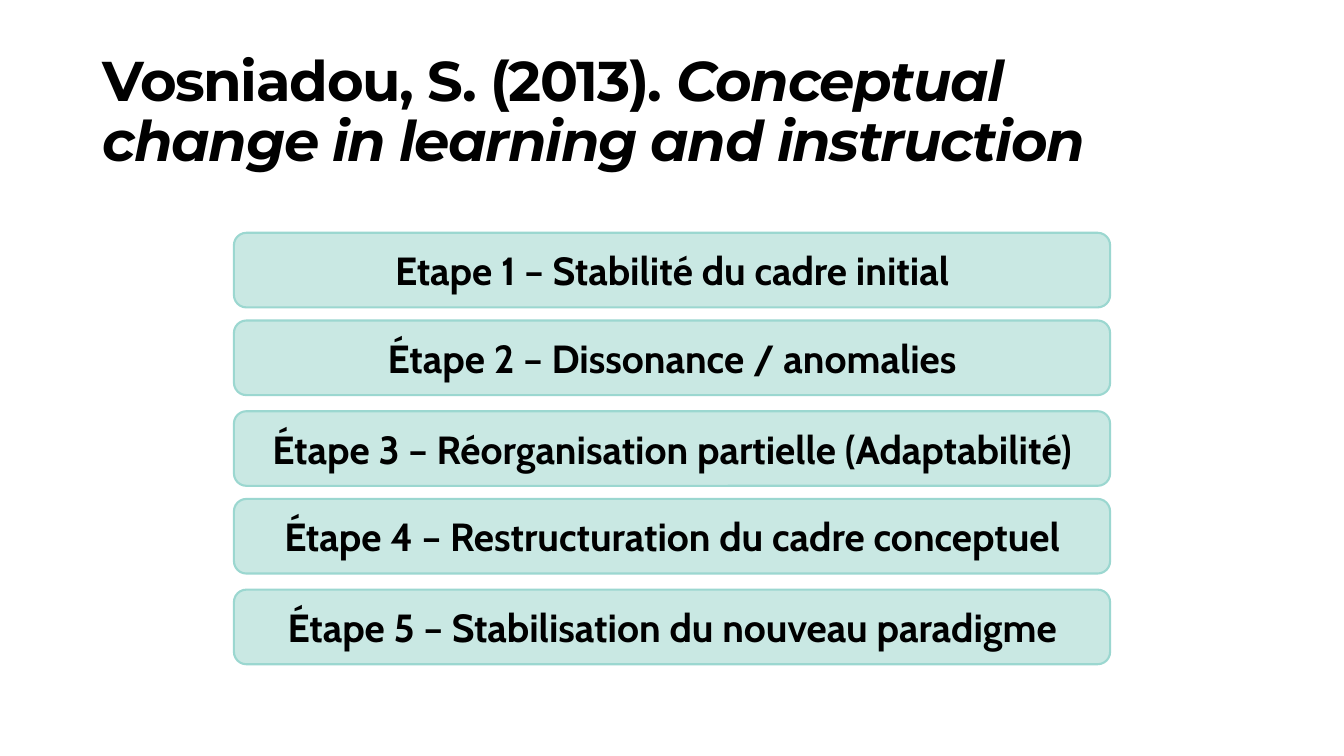
"""Build a slide listing the five stages of conceptual change."""
from dataclasses import dataclass

from pptx import Presentation
from pptx.dml.color import RGBColor
from pptx.enum.shapes import MSO_SHAPE
from pptx.enum.text import MSO_ANCHOR, MSO_AUTO_SIZE, PP_ALIGN
from pptx.util import Inches, Pt

ROUNDED = MSO_SHAPE.ROUNDED_RECTANGLE
MIDDLE = MSO_ANCHOR.MIDDLE
FIXED_SIZE = MSO_AUTO_SIZE.NONE
LEFT, CENTER = PP_ALIGN.LEFT, PP_ALIGN.CENTER

TITLE_LINES = [
    [("Vosniadou, S. (2013). ", False), ("Conceptual", True)],
    [("change in learning and instruction", True)],
]
STAGES = [
    "Etape 1 – Stabilité du cadre initial",
    "Étape 2 – Dissonance / anomalies",
    "Étape 3 – Réorganisation partielle (Adaptabilité)",
    "Étape 4 – Restructuration du cadre conceptuel",
    "Étape 5 – Stabilisation du nouveau paradigme",
]

SLIDE_SIZE = (13.33, 7.5)
TITLE_BOX = (0.92, 0.4, 11.5, 1.45)
STAGE_LEFT, STAGE_TOP, STAGE_WIDTH, STAGE_HEIGHT = 2.32, 2.31, 8.69, 0.74
PAIR_STEP, STEP_IN_PAIR = 1.77, 0.87


@dataclass(frozen=True)
class Theme:
    background: RGBColor = RGBColor.from_string("FFFFFF")
    text: RGBColor = RGBColor.from_string("000000")
    stage_fill: RGBColor = RGBColor.from_string("C9E8E3")
    stage_line: RGBColor = RGBColor.from_string("9BD7D0")
    title_font: str = "Montserrat"
    stage_font: str = "Cabin"
    title_size: int = 40
    stage_size: int = 28
    line_width: float = 1.5
    title_tracking: int = -100


THEME = Theme()


def add_run(paragraph, text, font_name, size, italic=False):
    run = paragraph.add_run()
    run.text = text
    run.font.name = font_name
    run.font.size = Pt(size)
    run.font.bold = True
    run.font.italic = italic
    run.font.color.rgb = THEME.text
    return run


def fill_title(title):
    title.left, title.top, title.width, title.height = map(Inches, TITLE_BOX)
    frame = title.text_frame
    frame.word_wrap = True
    frame.auto_size = FIXED_SIZE
    frame.vertical_anchor = MIDDLE
    paragraph = frame.paragraphs[0]
    paragraph.alignment = LEFT
    paragraph.line_spacing = 0.9
    for index, line in enumerate(TITLE_LINES):
        if index:
            paragraph.add_line_break()
        for text, italic in line:
            run = add_run(paragraph, text, THEME.title_font, THEME.title_size, italic)
            run.font._element.set("spc", str(THEME.title_tracking))


def add_stage(slide, index, text):
    pair, second = divmod(index, 2)
    top = STAGE_TOP + pair * PAIR_STEP + second * STEP_IN_PAIR
    box = (STAGE_LEFT, top, STAGE_WIDTH, STAGE_HEIGHT)
    shape = slide.shapes.add_shape(ROUNDED, *map(Inches, box))
    shape.shadow.inherit = False
    shape.fill.solid()
    shape.fill.fore_color.rgb = THEME.stage_fill
    shape.line.color.rgb = THEME.stage_line
    shape.line.width = Pt(THEME.line_width)
    frame = shape.text_frame
    frame.word_wrap = True
    frame.vertical_anchor = MIDDLE
    paragraph = frame.paragraphs[0]
    paragraph.alignment = CENTER
    add_run(paragraph, text, THEME.stage_font, THEME.stage_size)


def main():
    presentation = Presentation()
    presentation.slide_width, presentation.slide_height = map(Inches, SLIDE_SIZE)
    slide = presentation.slides.add_slide(presentation.slide_layouts[5])
    slide.background.fill.solid()
    slide.background.fill.fore_color.rgb = THEME.background
    fill_title(slide.shapes.title)
    for index, text in enumerate(STAGES):
        add_stage(slide, index, text)
    presentation.save("out.pptx")


if __name__ == "__main__":
    main()
